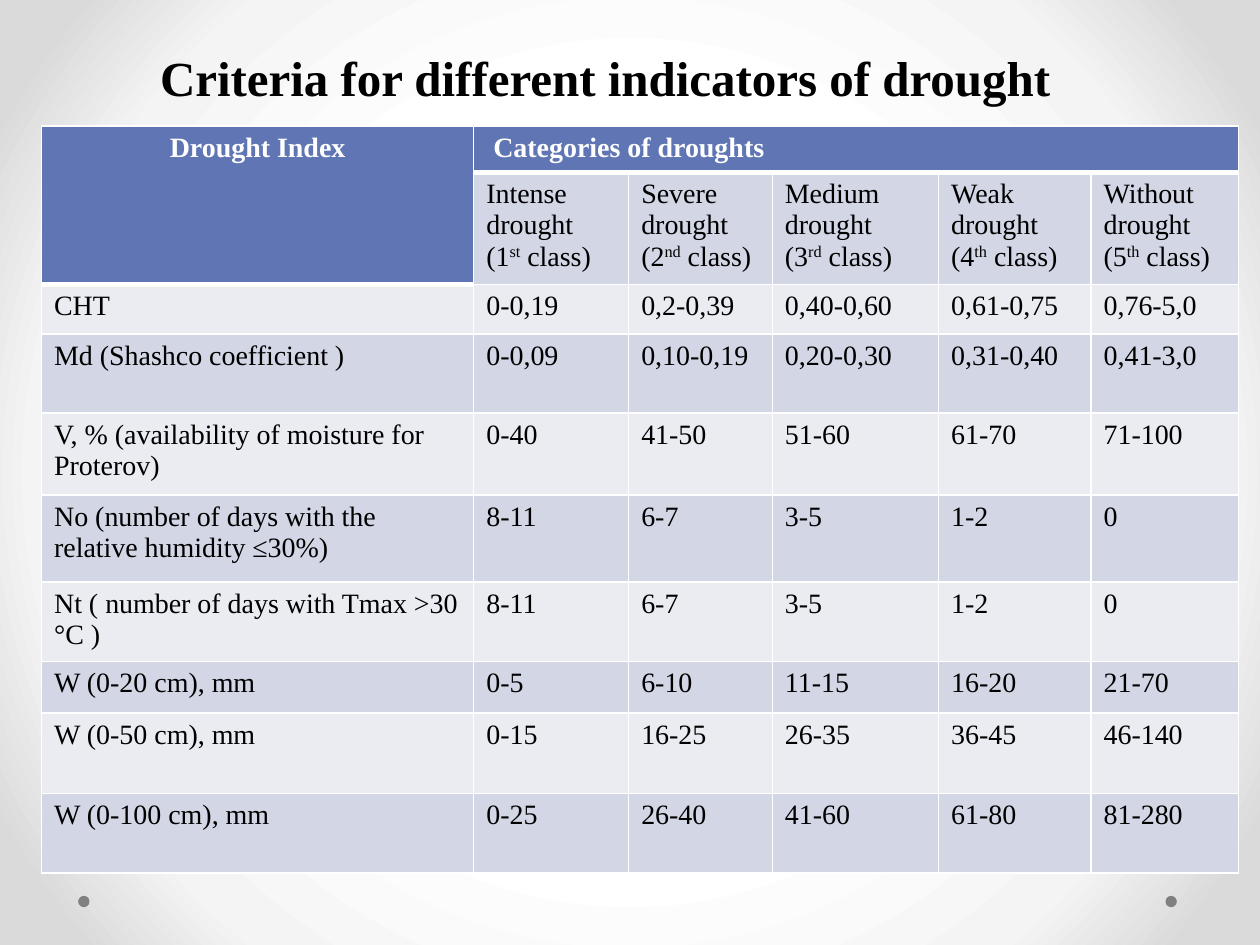
from pptx import Presentation
from pptx import util as u
from pptx.dml.color import RGBColor
from pptx.enum import shapes, text
from pptx.oxml import parse_xml
from pptx.oxml.ns import nsdecls, qn

FONT = "Times New Roman"
BLACK, WHITE, GREY = "000000", "FFFFFF", "808080"
HEADER, DARK_BAND, LIGHT_BAND = "6076B4", "D2D6E5", "EAECF2"
BACKGROUND_STOPS = [(50, "FFFFFF"), (76, "F4F4F4"), (92, "DADADA")]
COLUMN_WIDTHS = [3.43, 1.23, 1.14, 1.32, 1.21, 1.17]
ROW_HEIGHTS = [0.37, 0.89, 0.39, 0.63, 0.65, 0.69, 0.63, 0.41, 0.64, 0.63]
CLASSES = [
    ("Intense", "st"),
    ("Severe", "nd"),
    ("Medium", "rd"),
    ("Weak", "th"),
    ("Without", "th"),
]
INDICATORS = [
    ("CHT", "0-0,19", "0,2-0,39", "0,40-0,60", "0,61-0,75", "0,76-5,0"),
    ("Md (Shashco coefficient )", "0-0,09", "0,10-0,19", "0,20-0,30", "0,31-0,40", "0,41-3,0"),
    ("V, % (availability of moisture for Proterov)", "0-40", "41-50", "51-60", "61-70", "71-100"),
    ("No (number of days with the relative humidity ≤30%)", "8-11", "6-7", "3-5", "1-2", "0"),
    ("Nt ( number of days with Tmax >30 °С )", "8-11", "6-7", "3-5", "1-2", "0"),
    ("W (0-20 cm), mm", "0-5", "6-10", "11-15", "16-20", "21-70"),
    ("W (0-50 cm), mm", "0-15", "16-25", "26-35", "36-45", "46-140"),
    ("W (0-100 cm), mm", "0-25", "26-40", "41-60", "61-80", "81-280"),
]


def color(value):
    return RGBColor.from_string(value)


def style_para(para, size, value, bold=False, align=text.PP_ALIGN.LEFT):
    para.alignment = align
    para.font.name = FONT
    para.font.size = u.Pt(size)
    para.font.bold = bold
    para.font.color.rgb = color(value)


def paint_background(page):
    page.background.fill.gradient()
    gradient = page._element.find(".//" + qn("a:gradFill"))
    stops = "".join(
        f'<a:gs pos="{position * 1000}"><a:srgbClr val="{value}"/></a:gs>'
        for position, value in BACKGROUND_STOPS
    )
    radial = parse_xml(
        f'<a:gradFill {nsdecls("a")} rotWithShape="1"><a:gsLst>{stops}</a:gsLst>'
        '<a:path path="circle"><a:fillToRect l="50000" t="50000" r="50000" b="50000"/>'
        "</a:path></a:gradFill>"
    )
    gradient.getparent().replace(gradient, radial)


def add_dot(page, left):
    dot = page.shapes.add_shape(
        shapes.MSO_SHAPE.OVAL, u.Inches(left), u.Inches(7.11), u.Inches(0.09), u.Inches(0.09)
    )
    dot.shadow.inherit = False
    dot.fill.solid()
    dot.fill.fore_color.rgb = color(GREY)
    dot.line.fill.background()


def set_title(page, wording):
    title = page.shapes.title
    title.left, title.top = u.Inches(1.17), u.Inches(0.33)
    title.width, title.height = u.Inches(8), u.Inches(0.57)
    frame = title.text_frame
    frame.text = wording
    frame.word_wrap = True
    frame.auto_size = text.MSO_AUTO_SIZE.NONE
    frame.vertical_anchor = text.MSO_ANCHOR.TOP
    style_para(frame.paragraphs[0], 28, BLACK, bold=True)


def is_header(row, column):
    return row == 0 or (row == 1 and column == 0)


def style_cell(cell, row, column):
    header = is_header(row, column)
    below_header = row > 0 and is_header(row - 1, column)
    properties = cell._tc.get_or_add_tcPr()
    widths = {"lnL": 1, "lnR": 1, "lnT": 3 if below_header else 1, "lnB": 3 if header else 1}
    for side, width in widths.items():
        properties.append(parse_xml(
            f'<a:{side} {nsdecls("a")} w="{u.Pt(width)}"><a:solidFill>'
            f'<a:srgbClr val="{WHITE}"/></a:solidFill></a:{side}>'
        ))
    band = DARK_BAND if row % 2 else LIGHT_BAND
    cell.fill.solid()
    cell.fill.fore_color.rgb = color(HEADER if header else band)
    for para in cell.text_frame.paragraphs:
        centred = header and column == 0
        align = text.PP_ALIGN.CENTER if centred else text.PP_ALIGN.LEFT
        style_para(para, 16, WHITE if header else BLACK, header, align)


def write_class(cell, number, name, suffix):
    frame = cell.text_frame
    frame.text = f"{name} drought"
    para = frame.add_paragraph()
    para.add_run().text = f"({number}"
    span = para.add_run()
    span.text = suffix
    span._r.get_or_add_rPr().set("baseline", "30000")
    para.add_run().text = " class)"


def add_criteria_table(page):
    frame = page.shapes.add_table(
        len(ROW_HEIGHTS), len(COLUMN_WIDTHS),
        u.Inches(0.33), u.Inches(1), u.Inches(9.5), u.Inches(5.93),
    )
    table = frame.table
    table.first_row = table.horz_banding = False
    for column, width in zip(table.columns, COLUMN_WIDTHS):
        column.width = u.Inches(width)
    for row, height in zip(table.rows, ROW_HEIGHTS):
        row.height = u.Inches(height)

    table.cell(0, 0).merge(table.cell(1, 0))
    table.cell(0, 1).merge(table.cell(0, 5))
    table.cell(0, 0).text = "Drought Index"
    table.cell(0, 1).text = " Categories of droughts"
    for number, (name, suffix) in enumerate(CLASSES, start=1):
        write_class(table.cell(1, number), number, name, suffix)
    for row, values in enumerate(INDICATORS, start=2):
        for column, value in enumerate(values):
            table.cell(row, column).text = value

    for row in range(len(ROW_HEIGHTS)):
        for column in range(len(COLUMN_WIDTHS)):
            style_cell(table.cell(row, column), row, column)


def main():
    deck = Presentation()
    deck.slide_width, deck.slide_height = u.Inches(10), u.Inches(7.5)
    page = deck.slides.add_slide(deck.slide_layouts.get_by_name("Title Only"))
    paint_background(page)
    for left in (9.25, 0.62):
        add_dot(page, left)
    set_title(page, "Criteria for different indicators of drought")
    add_criteria_table(page)
    deck.save("out.pptx")


if __name__ == "__main__":
    main()
